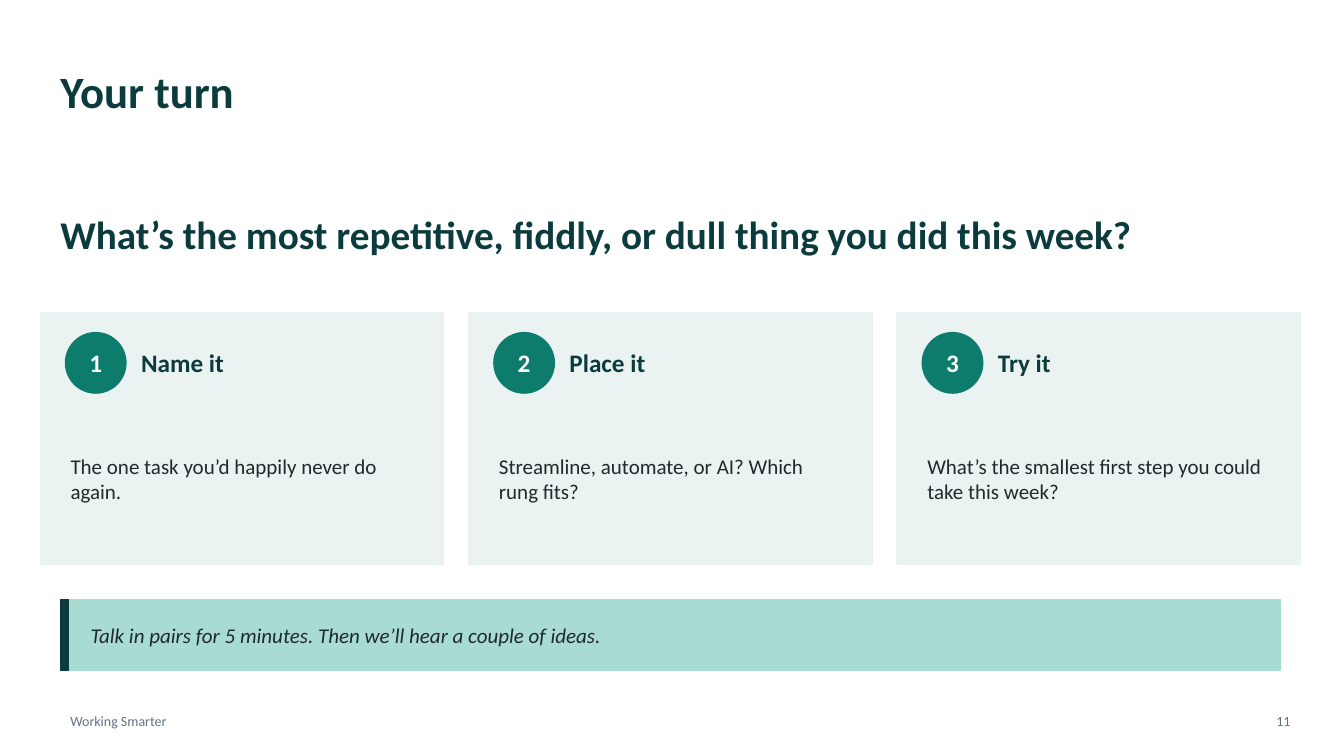
from pptx import Presentation
from pptx.dml.color import RGBColor
from pptx.enum.shapes import MSO_SHAPE as Shape
from pptx.enum.text import MSO_ANCHOR as Anchor, PP_ALIGN as Align
from pptx.util import Pt

TITLE = "Your turn"
QUESTION = "What’s the most repetitive, fiddly, or dull thing you did this week?"
STEPS = [
    ("Name it", "The one task you’d happily never do again."),
    ("Place it", "Streamline, automate, or AI? Which rung fits?"),
    ("Try it", "What’s the smallest first step you could take this week?"),
]
CALLOUT = "Talk in pairs for 5 minutes. Then we’ll hear a couple of ideas."
FOOTER = "Working Smarter"
PAGE = "11"

DARK = RGBColor(0x0B, 0x3B, 0x3C)
TEAL = RGBColor(0x0E, 0x7C, 0x6C)
MINT = RGBColor(0xA8, 0xDB, 0xD3)
PALE = RGBColor(0xEA, 0xF3, 0xF1)
INK = RGBColor(0x1F, 0x2A, 0x2A)
GREY = RGBColor(0x66, 0x70, 0x85)
WHITE = RGBColor(0xFF, 0xFF, 0xFF)
FONT = "Calibri"

MARGIN, CONTENT_W = 43.2, 871.2
CARD_X, CARD_Y, CARD_W, CARD_H, CARD_GAP = 28.8, 223.2, 288, 180, 18
BADGE = 43.2
CALLOUT_Y, CALLOUT_H = 428.4, 50.4
FOOTER_Y, FOOTER_H = 504, 21.6

prs = Presentation()
prs.slide_width, prs.slide_height = Pt(960), Pt(540)
s = prs.slides.add_slide(prs.slide_layouts[6])
s.background.fill.solid()
s.background.fill.fore_color.rgb = WHITE


def write(sp, text, size=15, color=INK, bold=False, italic=False,
          align=Align.LEFT, spacing=None, inset=(0, 0)):
    """Fill a shape with one vertically centred paragraph; inset is (x, y)."""
    tf = sp.text_frame
    tf.word_wrap = True
    tf.vertical_anchor = Anchor.MIDDLE
    tf.margin_left = tf.margin_right = Pt(inset[0])
    tf.margin_top = tf.margin_bottom = Pt(inset[1])
    p = tf.paragraphs[0]
    p.alignment = align
    if spacing:
        p.line_spacing = spacing
    r = p.add_run()
    r.text = text
    f = r.font
    f.name, f.size, f.bold, f.italic = FONT, Pt(size), bold, italic
    f.color.rgb = color


def add_text(x, y, w, h, text, **fmt):
    write(s.shapes.add_textbox(Pt(x), Pt(y), Pt(w), Pt(h)), text, **fmt)


def add_block(x, y, w, h, color, kind=Shape.RECTANGLE):
    sp = s.shapes.add_shape(kind, Pt(x), Pt(y), Pt(w), Pt(h))
    sp.shadow.inherit = False
    sp.fill.solid()
    sp.fill.fore_color.rgb = color
    sp.line.color.rgb = color
    sp.line.width = Pt(1)
    return sp


def add_card(x, number, heading, body):
    add_block(x, CARD_Y, CARD_W, CARD_H, PALE)
    badge = add_block(x + 18, CARD_Y + 14.4, BADGE, BADGE, TEAL, Shape.OVAL)
    write(badge, str(number), size=18, color=WHITE, bold=True, align=Align.CENTER)
    add_text(x + 72, CARD_Y + 18, 201.6, 36, heading, size=18, color=DARK, bold=True)
    add_text(x + 21.6, CARD_Y + 72, 244.8, 93.6, body)


add_text(MARGIN, 32.4, CONTENT_W, 64.8, TITLE, size=32, color=DARK, bold=True)
add_text(MARGIN, 129.6, CONTENT_W, 72, QUESTION, size=28, color=DARK, bold=True,
         spacing=1.1)

for i, (heading, body) in enumerate(STEPS):
    add_card(CARD_X + i * (CARD_W + CARD_GAP), i + 1, heading, body)

add_block(MARGIN, CALLOUT_Y, CONTENT_W, CALLOUT_H, MINT)
add_block(MARGIN, CALLOUT_Y, 5.76, CALLOUT_H, DARK)
add_text(MARGIN + 21.6, CALLOUT_Y, 842.4, CALLOUT_H, CALLOUT, italic=True)

small = dict(size=10, color=GREY, inset=(7.2, 3.6))
add_text(MARGIN, FOOTER_Y, 288, FOOTER_H, FOOTER, **small)
add_text(892.8, FOOTER_Y, 36, FOOTER_H, PAGE, align=Align.RIGHT, **small)

prs.save("out.pptx")
